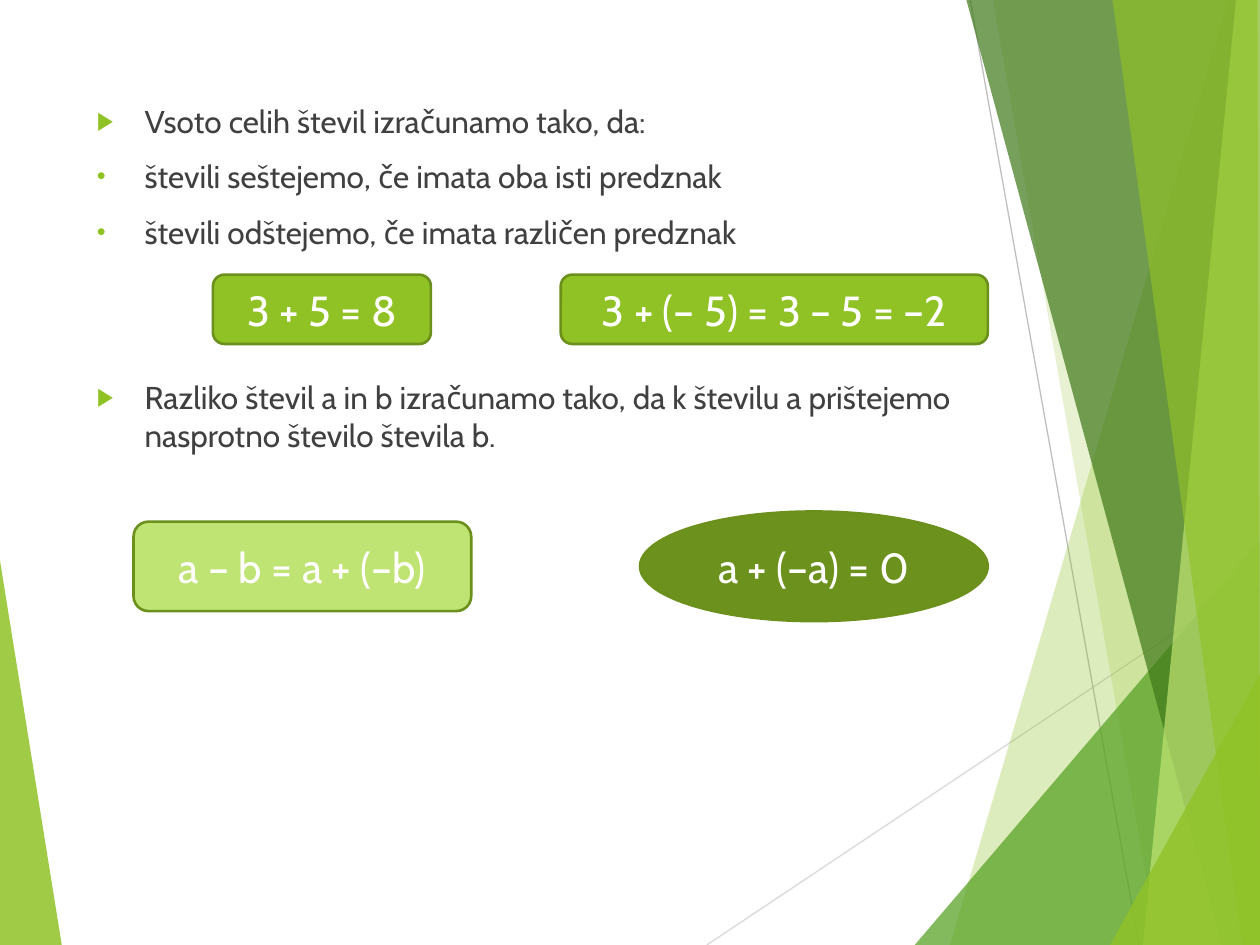
from lxml import etree
from pptx import Presentation
from pptx import util as u
from pptx.dml.color import RGBColor
from pptx.enum import shapes, text
from pptx.oxml.ns import qn

LIME, PALE, GREEN, FOREST = "90C226", "C0E474", "54A021", "3F7819"
OLIVE, BORDER, INK, WHITE = "6C921D", "6B901C", "404040", "FFFFFF"


def colour(hex_code):
    return RGBColor.from_string(hex_code)


def child(parent, tag, **attributes):
    return etree.SubElement(parent, qn(tag), **attributes)


class Board:
    font = "Cabin"
    body_size = 18
    formula_size = 24

    def __init__(self, slide):
        self.slide = slide

    def wording(self, paragraph, words, size, ink):
        run = paragraph.add_run()
        run.text = words
        run.font.name = self.font
        run.font.size = u.Pt(size)
        run.font.color.rgb = colour(ink)

    def facet(self, corners, fill, opacity):
        points = [(u.Inches(x), u.Inches(y)) for x, y in corners]
        builder = self.slide.shapes.build_freeform(*points[0])
        builder.add_line_segments(points[1:], close=True)
        facet = builder.convert_to_shape()
        facet.shadow.inherit = False
        facet.fill.solid()
        facet.fill.fore_color.rgb = colour(fill)
        facet.line.fill.background()
        tint = facet._element.spPr.find(qn("a:solidFill"))[0]
        child(tint, "a:alpha", val=str(opacity * 1000))

    def ray(self, start, end, ink):
        ends = [u.Inches(v) for v in (*start, *end)]
        ray = self.slide.shapes.add_connector(shapes.MSO_CONNECTOR.STRAIGHT, *ends)
        ray.line.color.rgb = colour(ink)
        ray.line.width = u.Pt(0.75)
        child(ray._element.spPr, "a:effectLst")

    def rules(self, box, items):
        frame = self.slide.shapes.add_textbox(*map(u.Inches, box)).text_frame
        frame.word_wrap = True
        for i, (bullet, words, gap) in enumerate(items):
            rule = frame.add_paragraph() if i else frame.paragraphs[0]
            rule.space_before = u.Pt(gap)
            self.bullet(rule, bullet)
            self.wording(rule, words, self.body_size, INK)

    def bullet(self, paragraph, symbol):
        props = paragraph._p.get_or_add_pPr()
        indent = u.Inches(0.38)
        props.set("marL", str(indent))
        props.set("indent", str(-indent))
        child(child(props, "a:buClr"), "a:srgbClr", val=LIME)
        child(props, "a:buSzPct", val="80000")
        child(props, "a:buFont", typeface="Arial")
        child(props, "a:buChar", char=symbol)

    def formula(self, kind, box, fill, words):
        card = self.slide.shapes.add_shape(kind, *map(u.Inches, box))
        card.shadow.inherit = False
        card.fill.solid()
        card.fill.fore_color.rgb = colour(fill)
        card.line.color.rgb = colour(BORDER)
        card.line.width = u.Pt(1.5)
        frame = card.text_frame
        frame.word_wrap = True
        frame.vertical_anchor = text.MSO_ANCHOR.MIDDLE
        paragraph = frame.paragraphs[0]
        paragraph.alignment = text.PP_ALIGN.CENTER
        self.wording(paragraph, words, self.formula_size, WHITE)


def main():
    deck = Presentation()
    deck.slide_width, deck.slide_height = u.Inches(10), u.Inches(7.5)
    board = Board(deck.slides.add_slide(deck.slide_layouts[6]))

    board.facet([(0, 4.45), (0.49, 7.5), (0, 7.5)], LIME, 85)
    board.ray((5.61, 7.5), (10, 4.57), "D9D9D9")
    board.ray((7.7, 0), (9.04, 7.5), "BFBFBF")

    right_facets = [
        ([(9.75, 0), (7.54, 7.5), (10, 7.5), (10, 0)], LIME, 30),
        ([(7.88, 0), (9.19, 7.5), (10, 7.5), (10, 0)], LIME, 20),
        ([(7.26, 7.5), (10, 4.29), (10, 7.5)], GREEN, 72),
        ([(7.67, 0), (9.7, 7.5), (10, 7.5), (10, 0)], FOREST, 70),
        ([(9.81, 0), (9.07, 7.5), (10, 7.5), (10, 0)], PALE, 70),
        ([(8.83, 0), (9.86, 7.5), (10, 7.5), (9.98, 0)], LIME, 65),
        ([(8.81, 7.5), (10, 5.35), (10, 7.5)], LIME, 80),
    ]
    for corners, fill, opacity in right_facets:
        board.facet(corners, fill, opacity)

    board.rules((0.67, 0.76, 7.4, 5.85), [
        ("▶", "Vsoto celih števil izračunamo tako, da:", 10),
        ("•", "števili seštejemo, če imata oba isti predznak", 10),
        ("•", "števili odštejemo, če imata različen predznak", 10),
        ("▶", "Razliko števil a in b izračunamo tako, da k številu a "
              "prištejemo nasprotno število števila b.", 73),
    ])

    rounded, oval = shapes.MSO_SHAPE.ROUNDED_RECTANGLE, shapes.MSO_SHAPE.OVAL
    board.formula(rounded, (1.06, 4.14, 2.68, 0.71), PALE, "a – b = a + (–b)")
    board.formula(rounded, (1.69, 2.18, 1.73, 0.55), LIME, "3 + 5 = 8")
    board.formula(rounded, (4.45, 2.18, 3.39, 0.55), LIME, "3 + (– 5) = 3 – 5 = –2")
    board.formula(oval, (5.08, 4.06, 2.76, 0.87), OLIVE, "a + (–a) = 0")

    deck.save("out.pptx")


if __name__ == "__main__":
    main()
